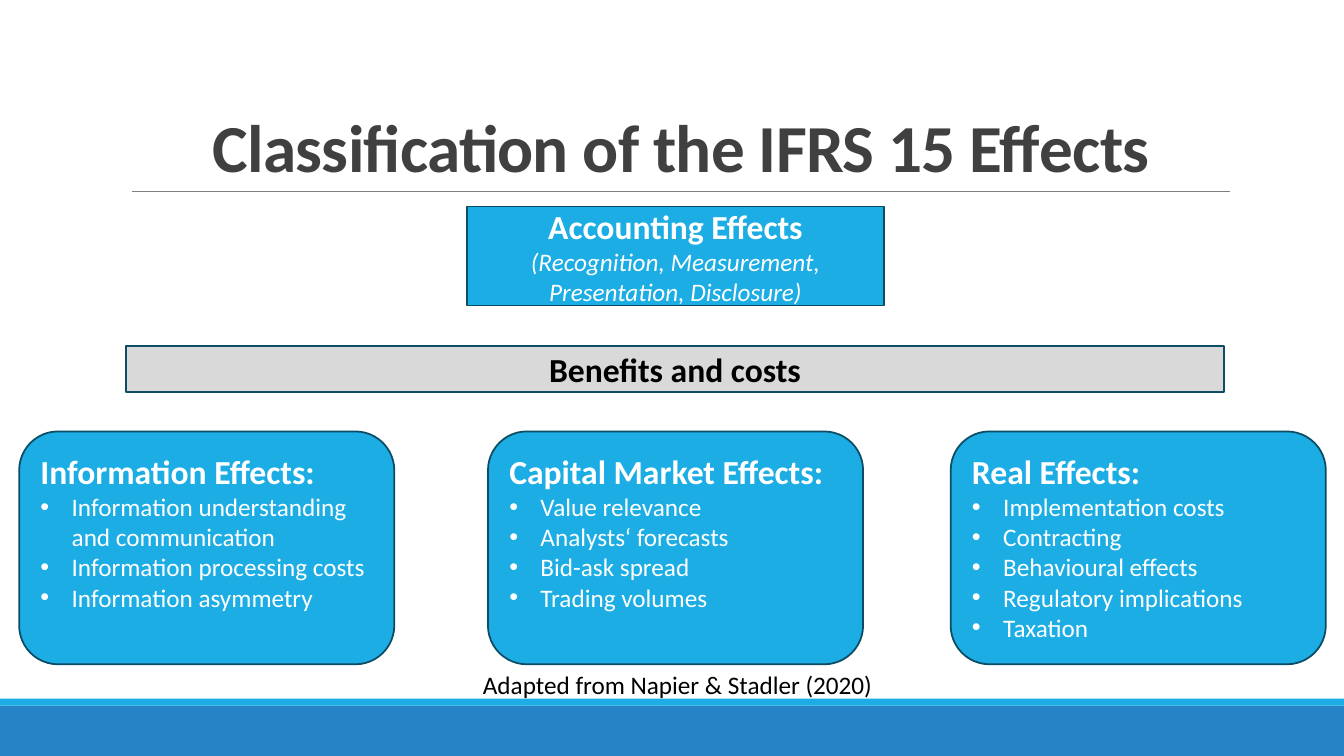
from lxml.etree import SubElement
from pptx import Presentation
from pptx.dml.color import RGBColor
from pptx.enum.shapes import MSO_CONNECTOR, MSO_SHAPE
from pptx.enum.text import MSO_ANCHOR, PP_ALIGN
from pptx.oxml.ns import qn
from pptx.util import Inches, Pt

FONT = "Calibri"
BLUE, DEEP_BLUE, OUTLINE = "1CADE4", "2683C6", "0C4C64"
WHITE, BLACK, LIGHT_GRAY, GRAY, DARK_GRAY = "FFFFFF", "000000", "D9D9D9", "808080", "404040"

TITLE = "Classification of the IFRS 15 Effects"
ACCOUNTING = ("Accounting Effects", "(Recognition, Measurement, Presentation, Disclosure)")
BENEFITS = "Benefits and costs"
SOURCE = "Adapted from Napier & Stadler (2020)"
CARDS = [
    ("Information Effects:", [
        "Information understanding and communication",
        "Information processing costs",
        "Information asymmetry",
    ]),
    ("Capital Market Effects:", [
        "Value relevance",
        "Analysts‘ forecasts",
        "Bid-ask spread",
        "Trading volumes",
    ]),
    ("Real Effects:", [
        "Implementation costs",
        "Contracting",
        "Behavioural effects",
        "Regulatory implications",
        "Taxation",
    ]),
]

BANDS = [((0, 93.33, 100, 6.67), DEEP_BLUE), ((0, 92.4, 100, 0.93), BLUE)]
TITLE_AREA = (9.83, 4.13, 81.7, 21.2)
ACCOUNTING_AREA = (34.73, 27.33, 31.06, 13.07)
BENEFITS_AREA = (9.38, 45.73, 81.7, 6.13)
SOURCE_AREA = (34.96, 87.87, 30.68, 5.33)
CARD_LEFTS = (1.43, 36.31, 70.74)
CARD_TOP, CARD_WIDTH, CARD_HEIGHT = 57.07, 27.91, 30.8

deck = Presentation()
deck.slide_width, deck.slide_height = Inches(13.33), Inches(7.5)
page = deck.slides.add_slide(deck.slide_layouts[6])


def color(value):
    return RGBColor.from_string(value)


def place(area):
    sides = (deck.slide_width, deck.slide_height) * 2
    return [round(side * share / 100) for side, share in zip(sides, area)]


def add_box(kind, area, fill, outline=None):
    box = page.shapes.add_shape(kind, *place(area))
    box.shadow.inherit = False
    box.fill.solid()
    box.fill.fore_color.rgb = color(fill)
    if outline:
        box.line.color.rgb = color(outline)
        box.line.width = Pt(1.25)
    else:
        box.line.fill.background()
    return box


def add_label(area):
    box = page.shapes.add_textbox(*place(area))
    box.text_frame.word_wrap = True
    return box


def add_bullet(para):
    properties = para._p.get_or_add_pPr()
    properties.set("marL", str(Inches(0.31)))
    properties.set("indent", str(-Inches(0.31)))
    SubElement(properties, qn("a:buFont"), typeface="Arial")
    SubElement(properties, qn("a:buChar"), char="•")


def write(box, lines, ink, align, anchor=MSO_ANCHOR.MIDDLE, bullets=False):
    frame = box.text_frame
    frame.vertical_anchor = anchor
    frame.text = "\n".join(text for text, *_ in lines)
    for para, (_, size, bold, italic) in zip(frame.paragraphs, lines):
        para.alignment = align
        if bullets and not bold:
            add_bullet(para)
        for span in para.runs:
            span.font.name = FONT
            span.font.size = Pt(size)
            span.font.bold = bold
            span.font.italic = italic
            span.font.color.rgb = color(ink)


for area, fill in BANDS:
    add_box(MSO_SHAPE.RECTANGLE, area, fill)

left, top, width, height = place(TITLE_AREA)
rule = page.shapes.add_connector(
    MSO_CONNECTOR.STRAIGHT, left, top + height, left + width, top + height)
rule.line.color.rgb = color(GRAY)
rule.line.width = Pt(0.5)
SubElement(rule._element.spPr, qn("a:effectLst"))

title = add_label(TITLE_AREA)
write(title, [(TITLE, 48, True, False)], DARK_GRAY, PP_ALIGN.CENTER, MSO_ANCHOR.BOTTOM)
heading = title.text_frame.paragraphs[0]
heading.line_spacing = 0.85
heading.runs[0].font._element.set("spc", "-50")

accounting = add_box(MSO_SHAPE.FLOWCHART_PROCESS, ACCOUNTING_AREA, BLUE, OUTLINE)
name, detail = ACCOUNTING
write(accounting, [(name, 24, True, False), (detail, 18, False, True)],
      WHITE, PP_ALIGN.CENTER)

benefits = add_box(MSO_SHAPE.FLOWCHART_PROCESS, BENEFITS_AREA, LIGHT_GRAY, OUTLINE)
write(benefits, [(BENEFITS, 24, True, False)], BLACK, PP_ALIGN.CENTER)

for left, (name, effects) in zip(CARD_LEFTS, CARDS):
    card = add_box(MSO_SHAPE.FLOWCHART_ALTERNATE_PROCESS,
                   (left, CARD_TOP, CARD_WIDTH, CARD_HEIGHT), BLUE, OUTLINE)
    card.text_frame.margin_top = Inches(0.08)
    lines = [(name, 24, True, False)] + [(effect, 18, False, False) for effect in effects]
    write(card, lines, WHITE, PP_ALIGN.LEFT, MSO_ANCHOR.TOP, bullets=True)

write(add_label(SOURCE_AREA), [(SOURCE, 18, False, False)],
      BLACK, PP_ALIGN.RIGHT, MSO_ANCHOR.TOP)

deck.save("out.pptx")
